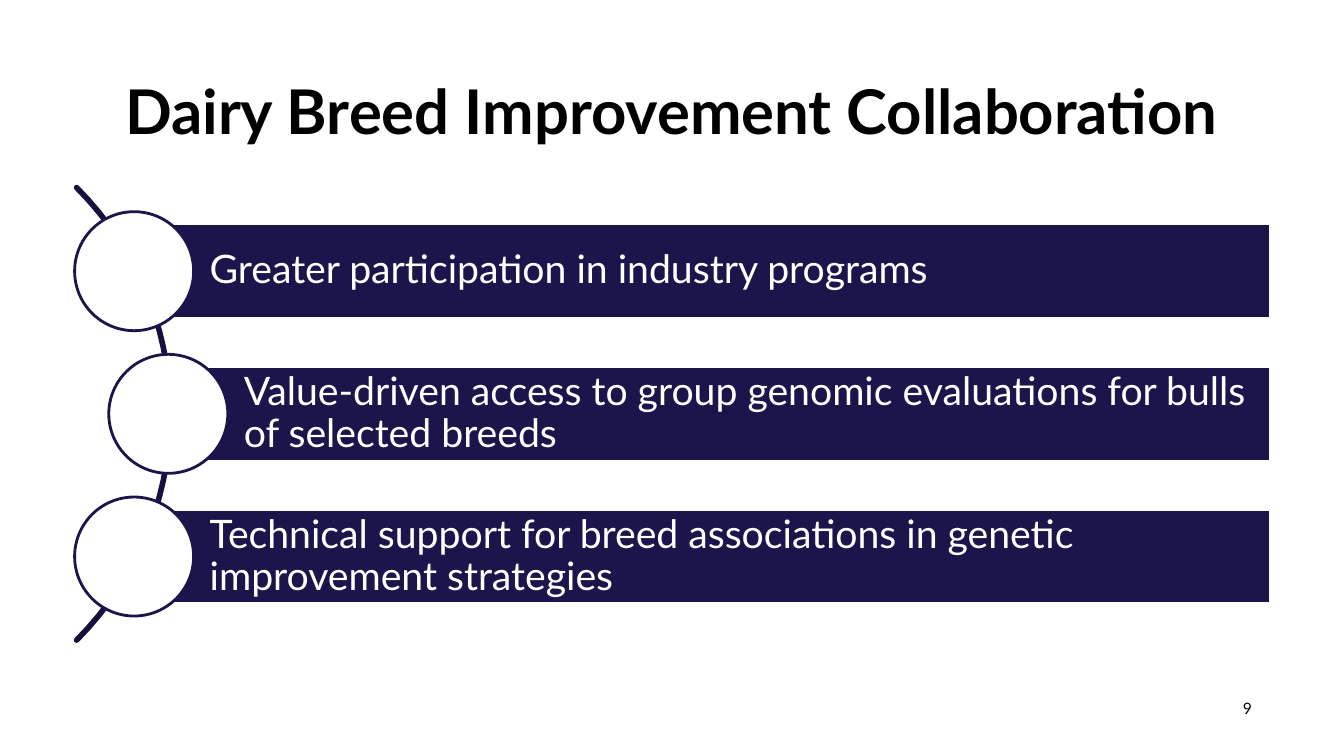
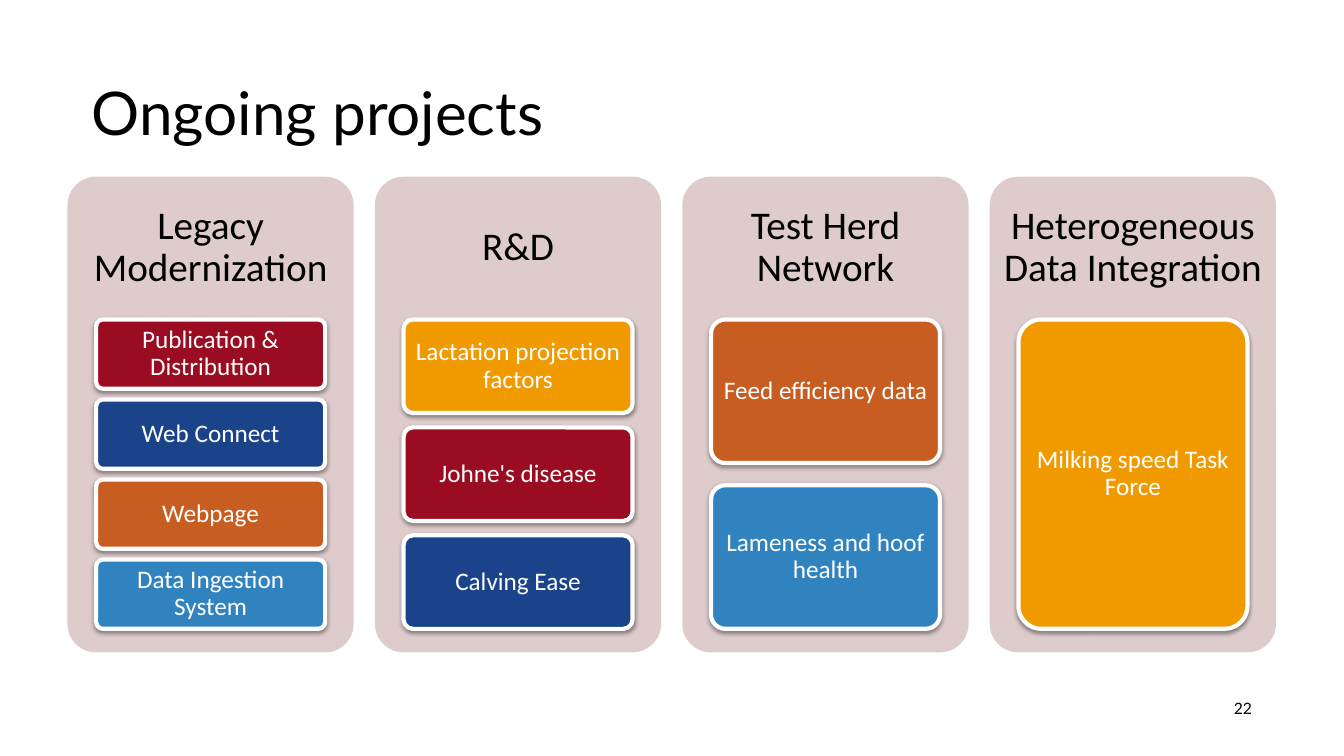
import math

import pptx
import pptx.dml.color
import pptx.enum.shapes
import pptx.enum.text
import pptx.oxml
import pptx.util
from lxml import etree

Pt = pptx.util.Pt
RGB = pptx.dml.color.RGBColor
SHAPE = pptx.enum.shapes.MSO_SHAPE
ALIGN = pptx.enum.text.PP_ALIGN
ANCHOR = pptx.enum.text.MSO_ANCHOR

BLACK = RGB(0x00, 0x00, 0x00)
WHITE = RGB(0xFF, 0xFF, 0xFF)
NAVY = RGB(0x1B, 0x15, 0x4B)
INK = RGB(0x16, 0x11, 0x3C)
ROSE = RGB(0xDE, 0xCC, 0xCD)
RED = RGB(0x99, 0x0C, 0x22)
BLUE = RGB(0x1B, 0x43, 0x89)
RUST = RGB(0xC8, 0x5D, 0x22)
SKY = RGB(0x31, 0x83, 0xC0)
GOLD = RGB(0xF0, 0x9A, 0x00)

HEAD = "Lato"
BODY = "Calibri"
PAD = (17.28, 8.64, 17.28, 8.64)

POINTS = [
    "Greater participation in industry programs",
    "Value-driven access to group genomic evaluations for bulls of selected breeds",
    "Technical support for breed associations in genetic improvement strategies",
]
GROUPS = [
    ("Legacy Modernization", [
        ("Publication & Distribution", RED),
        ("Web Connect", BLUE),
        ("Webpage", RUST),
        ("Data Ingestion System", SKY),
    ]),
    ("R&D", [
        ("Lactation projection factors", GOLD),
        ("Johne's disease", RED),
        ("Calving Ease", BLUE),
    ]),
    ("Test Herd Network", [
        ("Feed efficiency data", RUST),
        ("Lameness and hoof health", SKY),
    ]),
    ("Heterogeneous Data Integration", [
        ("Milking speed Task Force", GOLD),
    ]),
]


def write(shape, text, size, font, color, align, pad, bold=False,
          anchor=ANCHOR.MIDDLE, space=0.9):
    frame = shape.text_frame
    frame.word_wrap = True
    frame.vertical_anchor = anchor
    (frame.margin_left, frame.margin_top,
     frame.margin_right, frame.margin_bottom) = [Pt(side) for side in pad]
    para = frame.paragraphs[0]
    para.alignment = align
    para.line_spacing = space
    run = para.add_run()
    run.text = text
    run.font.size = Pt(size)
    run.font.name = font
    run.font.bold = bold
    run.font.color.rgb = color


def add_text(slide, box, *args, **style):
    write(slide.shapes.add_textbox(*[Pt(side) for side in box]), *args, **style)


def add_shape(slide, kind, box, fill, line=None, width=2):
    shape = slide.shapes.add_shape(kind, *[Pt(side) for side in box])
    shape.shadow.inherit = False
    shape.fill.solid()
    shape.fill.fore_color.rgb = fill
    if line is None:
        shape.line.fill.background()
    else:
        shape.line.color.rgb = line
        shape.line.width = Pt(width)
    return shape


def add_shade(shape):
    effects = shape.element.spPr.find(pptx.oxml.ns.qn("a:effectLst"))
    shade = etree.SubElement(
        effects, pptx.oxml.ns.qn("a:outerShdw"), blurRad=str(Pt(3.1)),
        dist=str(Pt(1.6)), dir="5400000", rotWithShape="0")
    color = etree.SubElement(shade, pptx.oxml.ns.qn("a:srgbClr"), val=str(BLACK))
    etree.SubElement(color, pptx.oxml.ns.qn("a:alpha"), val="38000")


def add_arc(slide, mid_x, mid_y, radius):
    spots = []
    for angle in range(-45, 46, 3):
        turn = math.radians(angle)
        spots.append((Pt(mid_x + radius * math.cos(turn)),
                      Pt(mid_y + radius * math.sin(turn))))
    build = slide.shapes.build_freeform(*spots[0])
    build.add_line_segments(spots[1:], close=False)
    arc = build.convert_to_shape()
    arc.shadow.inherit = False
    arc.fill.background()
    arc.line.color.rgb = INK
    arc.line.width = Pt(4)
    arc.line._get_or_add_ln().set("cap", "rnd")


def add_slide(deck, title, number, size, align, bold):
    slide = deck.slides.add_slide(deck.slide_layouts[6])
    add_text(slide, (48.2, 9.4, 863.3, 105.1), title, size, HEAD, BLACK,
             align, PAD, bold=bold, anchor=ANCHOR.BOTTOM)
    add_text(slide, (687.6, 491.8, 223.9, 28.8), number, 11.2, HEAD, BLACK,
             ALIGN.RIGHT, PAD, space=1)
    return slide


def add_bands(slide):
    middle, step, height, ring, right = 295.6, 101.9, 67.4, 85, 907.2
    add_arc(slide, -106.9, middle, 228.6)
    for row, text in enumerate(POINTS):
        left = 120.2 if row == 1 else 95.8
        level = middle + (row - 1) * step
        band = add_shape(slide, SHAPE.RECTANGLE,
                         (left, level - height / 2, right - left, height),
                         NAVY, WHITE)
        write(band, text, 28, HEAD, WHITE, ALIGN.LEFT, (54, 5.76, 5.76, 5.76))
        add_shape(slide, SHAPE.OVAL,
                  (left - ring / 2, level - ring / 2, ring, ring), WHITE, NAVY)


def add_cards(slide, left, cards):
    top, total, ratio = 228.2, 221, 0.154
    count = len(cards)
    height = total / (count + ratio * (count - 1))
    for row, (text, fill) in enumerate(cards):
        card = add_shape(slide, SHAPE.ROUNDED_RECTANGLE,
                         (left, top + row * height * (1 + ratio), 163.6, height),
                         fill, WHITE, 3)
        card.adjustments[0] = 0.1
        add_shade(card)
        write(card, text, 18, BODY, WHITE, ALIGN.CENTER, (3.6, 2.7, 3.6, 2.7))


def add_groups(slide):
    for index, (name, cards) in enumerate(GROUPS):
        left, top, width = 48.2 + index * 219.6, 126.2, 204.5
        panel = add_shape(slide, SHAPE.ROUNDED_RECTANGLE,
                          (left, top, width, 339.8), ROSE)
        panel.adjustments[0] = 0.1
        add_text(slide, (left, top, width, 102), name, 28, BODY, BLACK,
                 ALIGN.CENTER, (8.4, 8.4, 8.4, 8.4))
        add_cards(slide, left + width / 10, cards)


def main():
    deck = pptx.Presentation()
    deck.slide_width = Pt(960)
    deck.slide_height = Pt(540)
    add_bands(add_slide(deck, "Dairy Breed Improvement Collaboration", "9",
                        44, ALIGN.CENTER, True))
    add_groups(add_slide(deck, "Ongoing projects", "22", 43, ALIGN.LEFT, False))
    deck.save("out.pptx")


if __name__ == "__main__":
    main()
